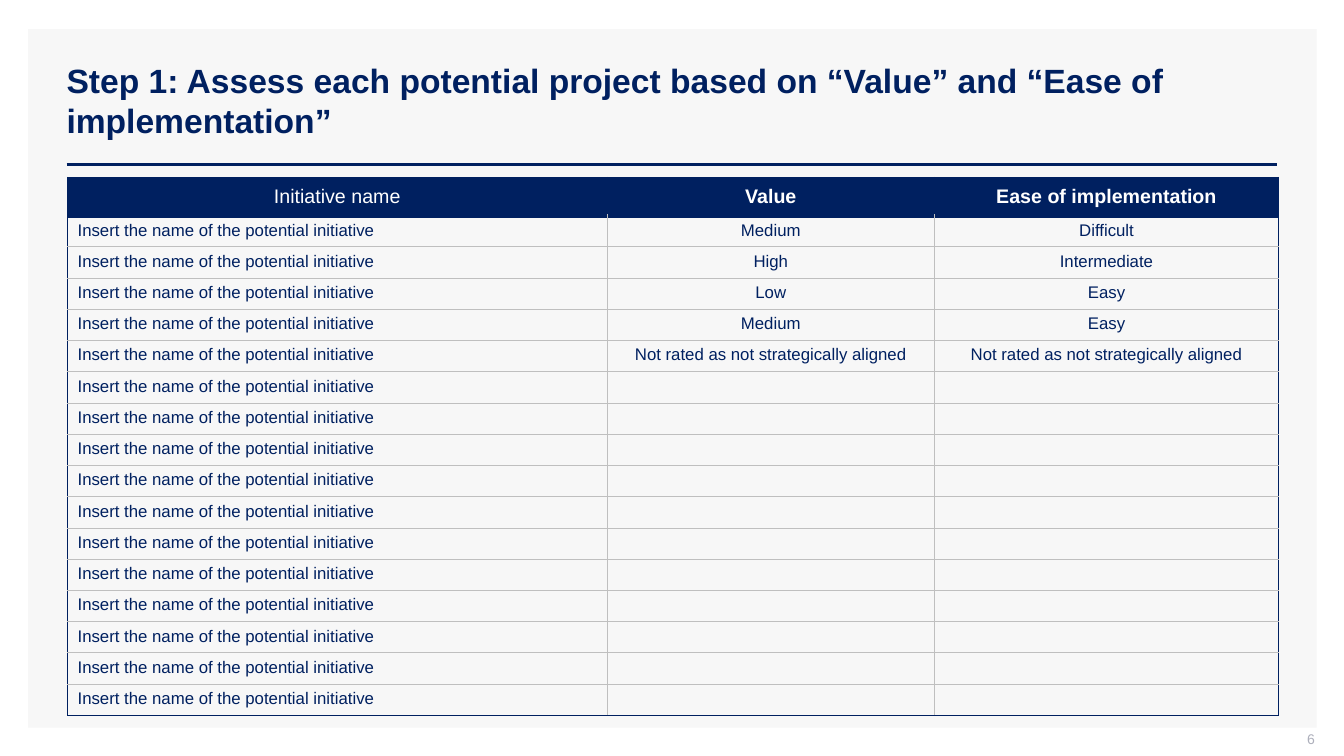
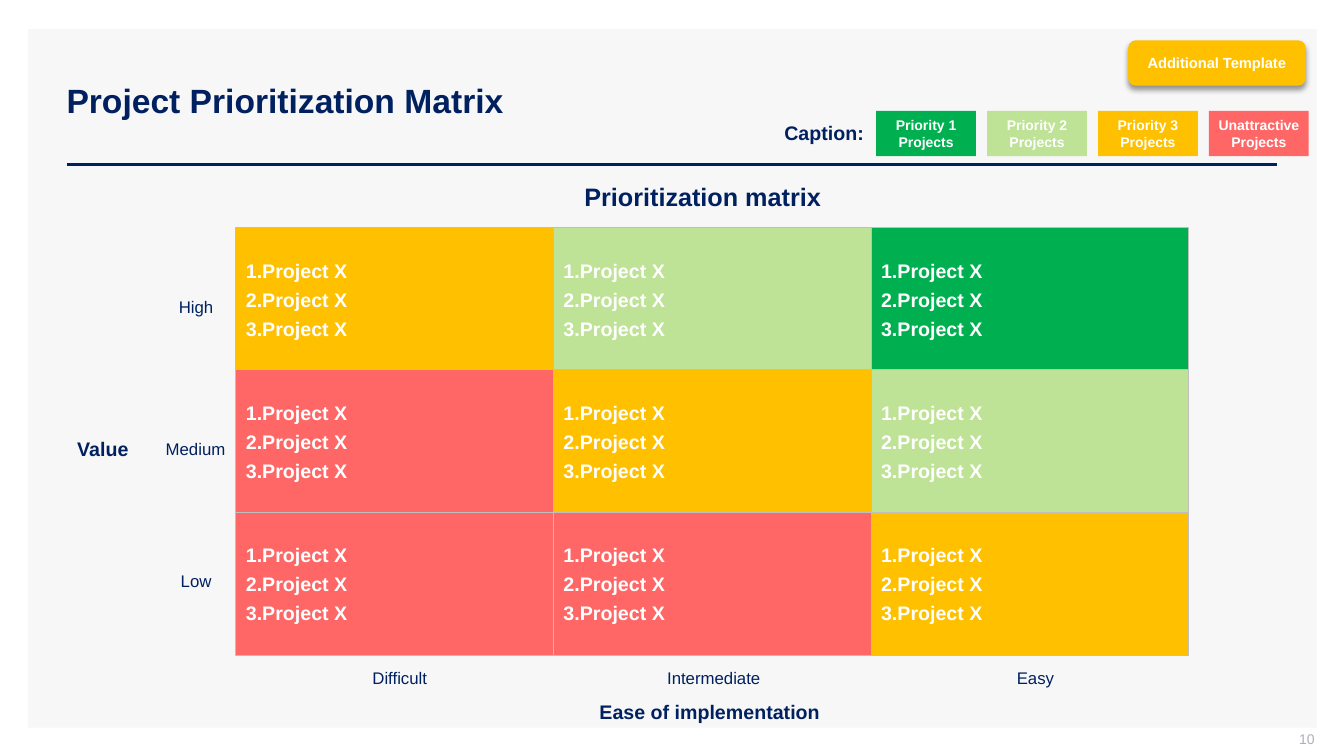
from dataclasses import dataclass

from lxml.etree import SubElement
from pptx import Presentation
from pptx.dml.color import RGBColor
from pptx.enum.shapes import MSO_CONNECTOR, MSO_SHAPE as Preset
from pptx.enum.text import MSO_ANCHOR as Anchor, MSO_AUTO_SIZE as AutoSize, PP_ALIGN as Align
from pptx.oxml.ns import qn
from pptx.util import Emu, Pt

PX = 9144  # EMU, so 100 px make an inch
TITLE_ONLY = 5


@dataclass(frozen=True)
class Theme:
    font: str = "Arial"
    navy: str = "002060"
    panel: str = "F7F7F7"
    rule: str = "BFBFBF"
    muted: str = "ADAFBB"
    white: str = "FFFFFF"
    green: str = "00B050"
    lime: str = "BEE396"
    amber: str = "FFC000"
    red: str = "FF6666"
    title: int = 24
    heading: int = 18
    strong: int = 14
    body: int = 12
    button: float = 10.5
    small: int = 10


THEME = Theme()


def px(*lengths):
    return [Emu(length * PX) for length in lengths]


def rgb(colour):
    return RGBColor.from_string(colour)


def add_xml(parent, tag, **attributes):
    child = SubElement(parent, qn(tag))
    for name, value in attributes.items():
        child.set(name, str(value))
    return child


def add_solid(parent, colour):
    fill = add_xml(parent, "a:solidFill")
    return add_xml(fill, "a:srgbClr", val=colour)


def number(para, colour, indent):
    """Make the paragraph an item of a numbered list."""
    properties = para._p.get_or_add_pPr()
    properties.set("marL", str(indent * PX))
    properties.set("indent", str(-indent * PX))
    add_xml(add_xml(properties, "a:buClr"), "a:srgbClr", val=colour)
    add_xml(properties, "a:buAutoNum", type="arabicPeriod")


def write(frame, text, size=THEME.body, colour=THEME.navy, bold=False,
          align=Align.LEFT, numbered=False, gap=0):
    """Fill a frame with one paragraph for each line of text."""
    for index, line in enumerate(text.split("\n")):
        para = frame.add_paragraph() if index else frame.paragraphs[0]
        if numbered:
            number(para, colour, 12)
        para.alignment = align
        para.space_before = Pt(gap if index else 0)
        para.space_after = Pt(gap)
        if not line:
            para._p.get_or_add_endParaRPr().set("sz", str(size * 100))
            continue
        span = para.add_run()
        span.text = line
        span.font.name = THEME.font
        span.font.size = Pt(size)
        span.font.bold = bold
        span.font.color.rgb = rgb(colour)


def arrange(frame, anchor=Anchor.MIDDLE, insets=(10, 5, 10, 5), wrap=True, grow=False):
    """Set how text sits in its frame; insets run left, top, right, bottom."""
    frame.vertical_anchor = anchor
    frame.word_wrap = wrap
    frame.auto_size = AutoSize.SHAPE_TO_FIT_TEXT if grow else AutoSize.NONE
    (frame.margin_left, frame.margin_top,
     frame.margin_right, frame.margin_bottom) = px(*insets)


def set_borders(cell, **sides):
    """Draw cell borders, each side given as (colour, points)."""
    properties = cell._tc.get_or_add_tcPr()
    for side in "LRTB":
        colour, points = sides[side]
        add_solid(add_xml(properties, f"a:ln{side}", w=int(Pt(points))), colour)


class Deck:
    def __init__(self, theme):
        self.theme = theme
        self.file = Presentation()
        self.file.slide_width, self.file.slide_height = px(1333, 750)
        self.page = None

    def add_page(self, title, page_number):
        theme = self.theme
        self.page = self.file.slides.add_slide(self.file.slide_layouts[TITLE_ONLY])
        self.add_box(28, 29, 1278, 693, theme.panel)
        self.add_rule(66, 163, 1267, 163)

        heading = self.page.shapes.title
        self.page.shapes.element.append(heading.element)  # in front of the panel
        heading.left, heading.top, heading.width, heading.height = px(56, 40, 1211, 119)
        arrange(heading.text_frame)
        write(heading.text_frame, title, size=theme.title, bold=True)

        footer = self.add_text(1004, 725, 300, 21, insets=(10, 0, 0, 5))
        write(footer, str(page_number), size=theme.small, colour=theme.muted, align=Align.RIGHT)

    def add_box(self, left, top, width, height, fill, line=None, preset=Preset.RECTANGLE):
        box = self.page.shapes.add_shape(preset, *px(left, top, width, height))
        box.shadow.inherit = False
        box.fill.solid()
        box.fill.fore_color.rgb = rgb(fill)
        if line:
            box.line.color.rgb = rgb(line)
            box.line.width = Pt(0.75)
        else:
            box.line.fill.background()
        return box

    def add_rule(self, *ends):
        rule = self.page.shapes.add_connector(MSO_CONNECTOR.STRAIGHT, *px(*ends))
        rule.line.color.rgb = rgb(self.theme.navy)
        rule.line.width = Pt(2)
        add_xml(rule._element.spPr, "a:effectLst")

    def add_text(self, left, top, width, height, **layout):
        box = self.page.shapes.add_textbox(*px(left, top, width, height))
        arrange(box.text_frame, **layout)
        return box.text_frame

    def add_button(self, left, top, width, height, text):
        theme = self.theme
        button = self.add_box(left, top, width, height, theme.amber,
                              preset=Preset.ROUNDED_RECTANGLE)
        effects = button._element.spPr.find(qn("a:effectLst"))
        shadow = add_xml(effects, "a:outerShdw", blurRad=int(Pt(4)), dist=int(Pt(3)),
                         dir=90 * 60000, algn="t", rotWithShape=0)
        add_xml(add_xml(shadow, "a:srgbClr", val="000000"), "a:alpha", val=40000)
        arrange(button.text_frame)
        write(button.text_frame, text, size=theme.button, colour=theme.white,
              bold=True, align=Align.CENTER)

    def add_table(self, left, top, widths, heights, rows):
        theme = self.theme
        frame = self.page.shapes.add_table(
            len(rows), len(widths), *px(left, top, sum(widths), sum(heights)))
        table = frame.table
        table.horz_banding = False
        for column, width in zip(table.columns, px(*widths)):
            column.width = width
        for row, height in zip(table.rows, px(*heights)):
            row.height = height

        last_row, last_column = len(rows) - 1, len(widths) - 1
        edge, inner = (theme.navy, 0.75), (theme.rule, 0.75)
        for r, texts in enumerate(rows):
            header = r == 0
            between = (theme.navy, 1) if header else inner
            above = edge if header else (theme.navy, 1) if r == 1 else inner
            below = (theme.navy, 3) if header else edge if r == last_row else inner
            for c, text in enumerate(texts):
                cell = table.cell(r, c)
                set_borders(cell, L=between if c else edge,
                            R=between if c < last_column else edge, T=above, B=below)
                if header:
                    cell.fill.solid()
                    cell.fill.fore_color.rgb = rgb(theme.navy)
                    cell.vertical_anchor = Anchor.MIDDLE
                else:
                    cell.fill.background()
                write(cell.text_frame, text,
                      size=theme.strong if header else theme.body,
                      colour=theme.white if header else theme.navy,
                      bold=header and c > 0,
                      align=Align.CENTER if header or c else Align.LEFT)


def build_assessment(deck):
    deck.add_page("Step 1: Assess each potential project based on “Value” "
                  "and “Ease of implementation”", 6)
    unrated = "Not rated as not strategically aligned"
    ratings = [("Medium", "Difficult"), ("High", "Intermediate"), ("Low", "Easy"),
               ("Medium", "Easy"), (unrated, unrated)] + [("", "")] * 11
    rows = [("Initiative name", "Value", "Ease of implementation")]
    rows += [("Insert the name of the potential initiative", *rating) for rating in ratings]
    deck.add_table(67, 176, (535, 325, 341), [38] + [31] * len(ratings), rows)


def build_matrix(deck):
    theme = deck.theme
    deck.add_page("Project Prioritization Matrix", 10)

    heading = deck.add_text(494, 180, 406, 30, insets=(8, 0, 8, 0), grow=True)
    write(heading, "Prioritization matrix", size=theme.heading, bold=True, align=Align.CENTER)

    colours = [(theme.amber, theme.lime, theme.green),
               (theme.red, theme.amber, theme.lime),
               (theme.red, theme.red, theme.amber)]
    for r, row in enumerate(colours):
        for c, colour in enumerate(row):
            box = deck.add_box(234 + 315 * c, 226 + 141 * r, 315, 142, colour, line=theme.rule)
            arrange(box.text_frame)
            write(box.text_frame, "\n".join(["Project X"] * 3), size=theme.strong,
                  colour=theme.white, bold=True, numbered=True, gap=2)

    for text, left, top, width in [("Value", 56, 423, 92),
                                   ("Ease of implementation", 574, 684, 260)]:
        axis = deck.add_text(left, top, width, 43, anchor=Anchor.TOP,
                             insets=(20, 10, 20, 10), wrap=False, grow=True)
        write(axis, text, size=theme.strong, bold=True, align=Align.CENTER)

    for text, left, top, width in [
            ("High", 167, 289, 55), ("Medium", 154, 430, 80), ("Low", 169, 561, 51),
            ("Difficult", 359, 658, 75), ("Intermediate", 651, 658, 114),
            ("Easy", 998, 658, 58)]:
        level = deck.add_text(left, top, width, 30, anchor=Anchor.TOP, wrap=False, grow=True)
        write(level, text, align=Align.CENTER)

    deck.add_button(1119, 40, 176, 45, "Additional Template")

    caption = deck.add_text(768, 115, 102, 34, anchor=Anchor.TOP, grow=True)
    write(caption, "Caption:", size=theme.strong, bold=True)
    legend = [("Priority 1 Projects", theme.green), ("Priority 2 Projects", theme.lime),
              ("Priority 3 Projects", theme.amber), ("Unattractive Projects", theme.red)]
    for index, (text, colour) in enumerate(legend):
        key = deck.add_box(869 + 110 * index, 110, 99, 45, colour)
        arrange(key.text_frame, insets=(4, 5, 4, 5))
        write(key.text_frame, text, size=theme.small, colour=theme.white,
              bold=True, align=Align.CENTER)


def main():
    deck = Deck(THEME)
    build_assessment(deck)
    build_matrix(deck)
    deck.file.save("out.pptx")


if __name__ == "__main__":
    main()
